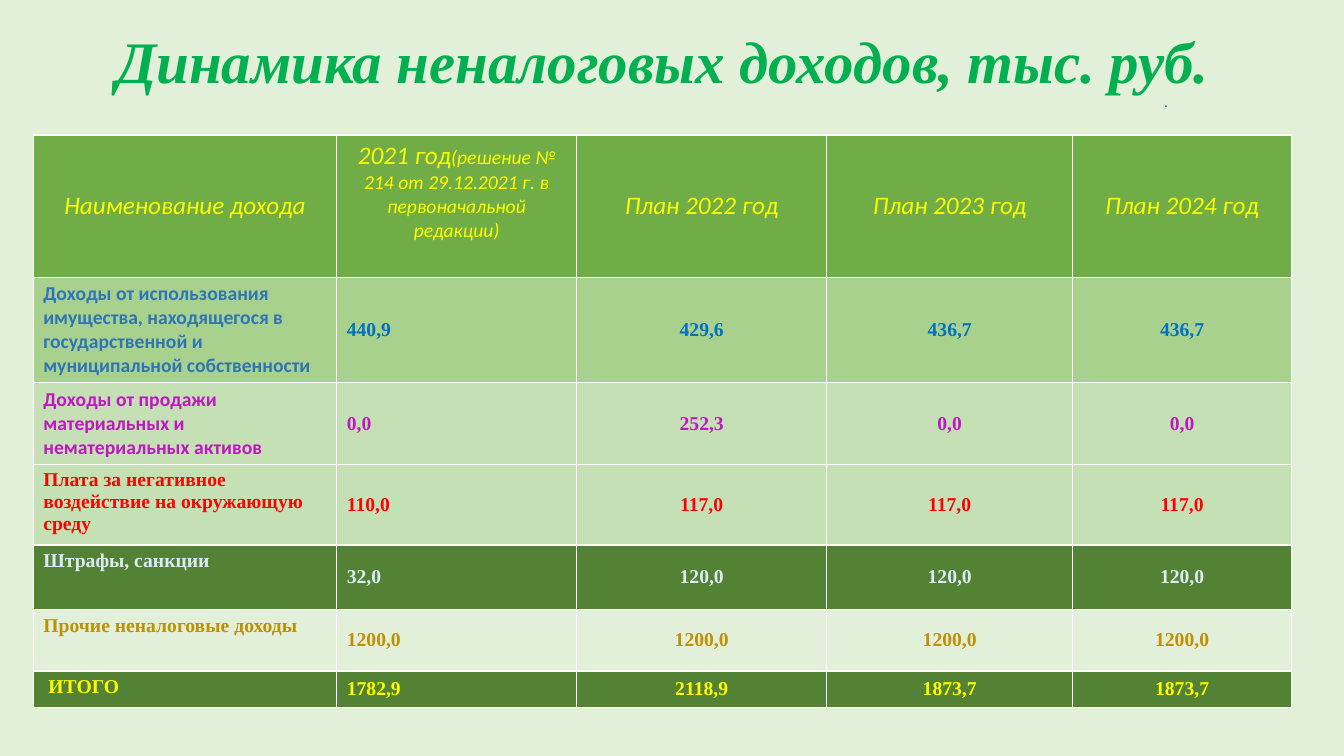
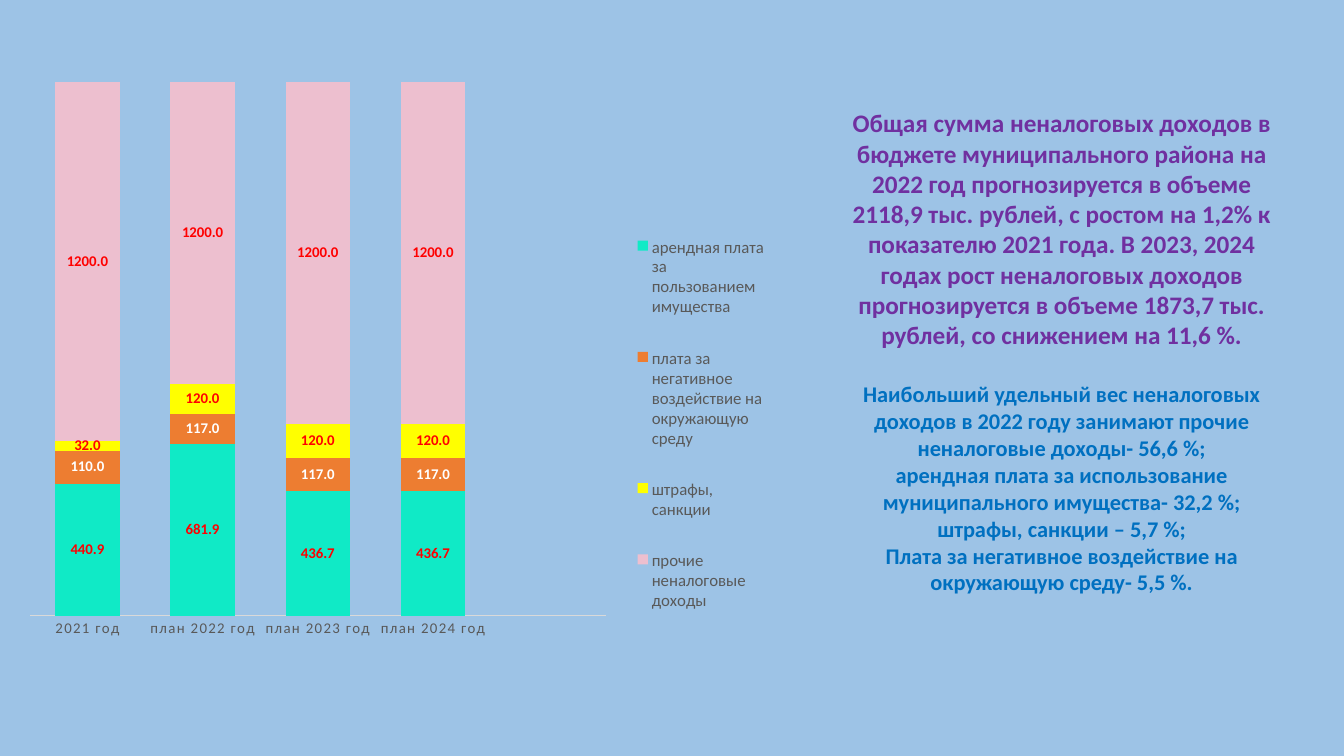
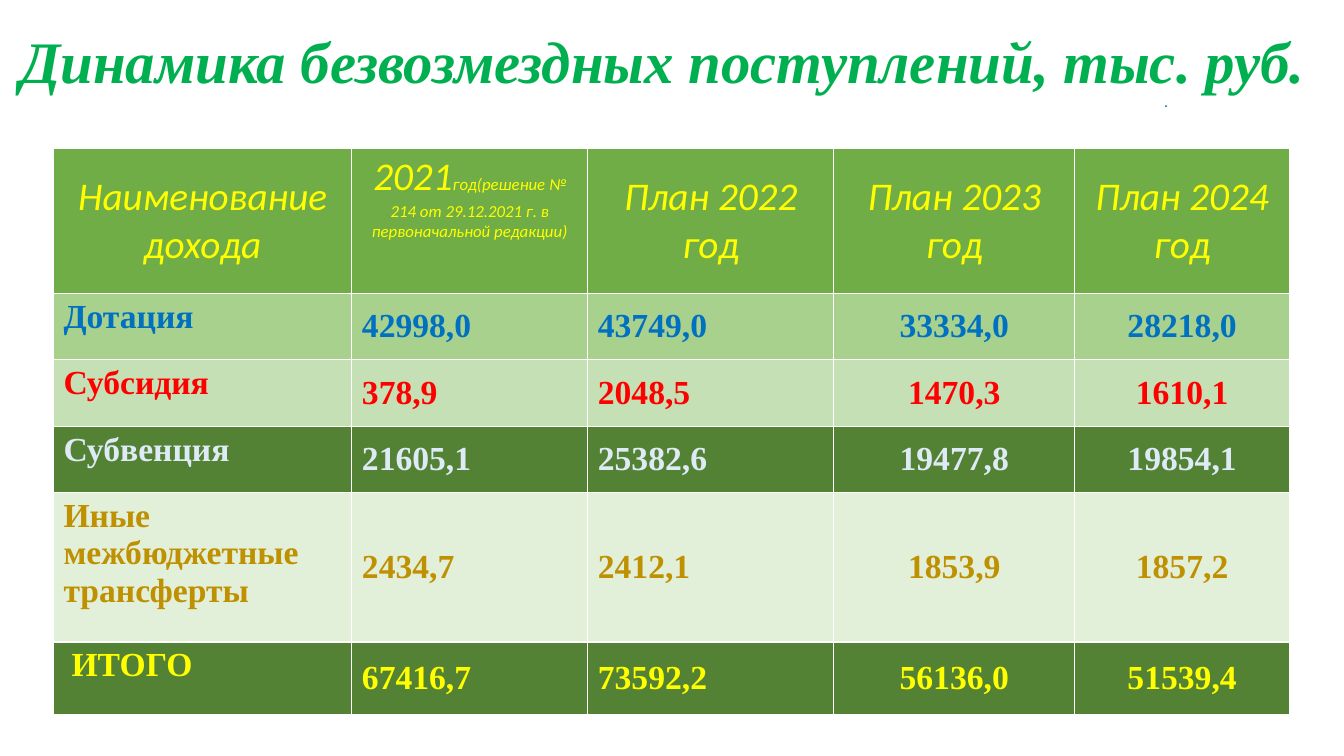
from dataclasses import dataclass

from lxml import etree
from pptx import Presentation
from pptx.chart.data import CategoryChartData
from pptx.dml.color import RGBColor
from pptx.enum import chart as charts, text as texts
from pptx.oxml.ns import qn
from pptx.util import Inches, Pt


@dataclass(frozen=True)
class Theme:
    serif: str = "Times New Roman"
    sans: str = "Calibri"
    title: str = "00B050"
    blue: str = "0070C0"
    steel: str = "2E75B6"
    magenta: str = "BE18C2"
    purple: str = "7030A0"
    red: str = "FF0000"
    ice: str = "DEEBF7"
    gold: str = "BF9000"
    yellow: str = "FFFF00"
    white: str = "FFFFFF"
    head: str = "70AD47"
    medium: str = "A9D18E"
    light: str = "C5E0B4"
    dark: str = "548235"
    pale: str = "E2F0D9"
    sky: str = "9DC3E6"
    grey: str = "595959"
    rule: str = "D9D9D9"
    title_size: float = 42
    dot_size: float = 9
    label_size: float = 10.6
    legend_size: float = 12
    lead_size: float = 18
    detail_size: float = 16


T = Theme()
CENTER, LEFT = texts.PP_ALIGN.CENTER, texts.PP_ALIGN.LEFT
TOP, MIDDLE = texts.MSO_ANCHOR.TOP, texts.MSO_ANCHOR.MIDDLE

DECISION = "(решение № 214 от 29.12.2021 г. в первоначальной редакции)"
PLANS = ["План 2022 год", "План 2023 год", "План 2024 год"]

# Each row: fill, name colour, value colour, name font, name, values
NON_TAX = dict(
    title="Динамика неналоговых доходов, тыс. руб.", background=T.pale,
    left=0.33, top=1.34, columns=[3.01, 2.38, 2.48, 2.44, 2.17],
    heights=[1.41, 1.03, 0.8, 0.8, 0.64, 0.61, 0.36],
    year=("2021 год", DECISION), head_size=18, note_size=14, size=14,
    left_columns=1, total_indent=0.05,
    rows=[
        (T.medium, T.steel, T.blue, T.sans,
         "Доходы от использования имущества, находящегося в государственной "
         "и муниципальной собственности", ["440,9", "429,6", "436,7", "436,7"]),
        (T.light, T.magenta, T.magenta, T.sans,
         "Доходы от продажи материальных и нематериальных активов",
         ["0,0", "252,3", "0,0", "0,0"]),
        (T.light, T.red, T.red, T.serif,
         "Плата за негативное воздействие на окружающую среду",
         ["110,0", "117,0", "117,0", "117,0"]),
        (T.dark, T.ice, T.ice, T.serif, "Штрафы, санкции",
         ["32,0", "120,0", "120,0", "120,0"]),
        (T.pale, T.gold, T.gold, T.serif, "Прочие неналоговые доходы",
         ["1200,0", "1200,0", "1200,0", "1200,0"]),
        (T.dark, T.yellow, T.yellow, T.serif, "ИТОГО",
         ["1782,9", "2118,9", "1873,7", "1873,7"]),
    ])

GRANTS = dict(
    title="Динамика безвозмездных поступлений, тыс. руб.", background=T.white,
    left=0.53, top=1.47, columns=[2.96, 2.34, 2.44, 2.39, 2.13],
    heights=[1.44, 0.66, 0.66, 0.66, 1.48, 0.72],
    year=("2021", "год" + DECISION), head_size=28, note_size=12, size=24,
    left_columns=2, total_indent=0.08,
    rows=[
        (T.medium, T.blue, T.blue, T.serif, "Дотация",
         ["42998,0", "43749,0", "33334,0", "28218,0"]),
        (T.light, T.red, T.red, T.serif, "Субсидия",
         ["378,9", "2048,5", "1470,3", "1610,1"]),
        (T.dark, T.ice, T.ice, T.serif, "Субвенция",
         ["21605,1", "25382,6", "19477,8", "19854,1"]),
        (T.pale, T.gold, T.gold, T.serif, "Иные межбюджетные трансферты",
         ["2434,7", "2412,1", "1853,9", "1857,2"]),
        (T.dark, T.yellow, T.yellow, T.serif, "ИТОГО",
         ["67416,7", "73592,2", "56136,0", "51539,4"]),
    ])

# The last category is an empty slot to the right of the columns
YEARS = ["2021 год", "план 2022 год", "план 2023 год", "план 2024 год", ""]
SERIES = [
    ("арендная плата за пользованием имущества",
     [440.9, 681.9, 436.7, 436.7, None], "10EAC6", T.red),
    ("плата за негативное воздействие на окружающую среду",
     [110, 117, 117, 117, None], "ED7D31", T.white),
    ("штрафы, санкции", [32, 120, 120, 120, None], T.yellow, T.red),
    ("прочие неналоговые доходы",
     [1200, 1200, 1200, 1200, None], "EDBFCF", T.red),
]
PLOT_AREA = (0, 0.032, 0.721, 0.808)
LEGEND_AREA = (0.76, 0.22, 0.16, 0.66)

SUMMARY = (
    "Общая сумма неналоговых доходов в бюджете муниципального района на 2022 год "
    "прогнозируется в объеме 2118,9 тыс. рублей, с ростом на 1,2% к показателю "
    "2021 года. В 2023, 2024 годах рост неналоговых доходов прогнозируется в "
    "объеме 1873,7 тыс. рублей, со снижением на 11,6 %.")
SHARES = [
    "Наибольший удельный вес неналоговых доходов в 2022 году занимают прочие "
    "неналоговые доходы- 56,6 %;",
    "арендная плата за использование муниципального имущества- 32,2 %;",
    "штрафы, санкции – 5,7 %;",
    "Плата за негативное воздействие на окружающую среду- 5,5 %.",
]


def rgb(value):
    return RGBColor.from_string(value)


def style(font, size, color, name=T.sans, bold=False, italic=False):
    font.size, font.name, font.bold, font.italic = Pt(size), name, bold, italic
    font.color.rgb = rgb(color)


def write(para, text, align=CENTER, before=0, **font):
    """Add a run to a paragraph and set the paragraph's alignment and spacing."""
    para.alignment, para.line_spacing = align, 1.0
    para.space_before = Pt(before)
    span = para.add_run()
    span.text = text
    style(span.font, **font)


def new_slide(deck, layout, background):
    page = deck.slides.add_slide(deck.slide_layouts[layout])
    page.background.fill.solid()
    page.background.fill.fore_color.rgb = rgb(background)
    return page


def add_title(page, text):
    box = page.shapes.title
    box.left, box.top, box.width, box.height = map(Inches, (0, 0.19, 13.14, 1.28))
    frame = box.text_frame
    frame.word_wrap, frame.auto_size = True, texts.MSO_AUTO_SIZE.NONE
    frame.vertical_anchor = TOP
    write(frame.paragraphs[0], text, size=T.title_size, color=T.title,
          name=T.serif, bold=True, italic=True)
    dot = frame.add_paragraph()
    dot._p.get_or_add_pPr().set("marL", str(Inches(11.45)))
    write(dot, ".", align=LEFT, size=T.dot_size, color=T.blue, bold=True, italic=True)


def fill_cell(cell, fill, spans, align=CENTER, anchor=MIDDLE):
    """Colour a cell and write its spans, given as (text, format) pairs."""
    cell.fill.solid()
    cell.fill.fore_color.rgb = rgb(fill)
    cell.vertical_anchor = anchor
    for text, font in spans:
        write(cell.text_frame.paragraphs[0], text, align=align, **font)


def table_slide(deck, data):
    page = new_slide(deck, 5, data["background"])
    add_title(page, data["title"])
    columns, heights = data["columns"], data["heights"]
    table = page.shapes.add_table(
        len(heights), len(columns), Inches(data["left"]), Inches(data["top"]),
        Inches(sum(columns)), Inches(sum(heights))).table
    for column, width in zip(table.columns, columns):
        column.width = Inches(width)
    for row, height in zip(table.rows, heights):
        row.height = Inches(height)

    head = dict(size=data["head_size"], color=T.yellow, italic=True)
    year, note = data["year"]
    fill_cell(table.cell(0, 1), T.head,
              [(year, head), (note, {**head, "size": data["note_size"]})], anchor=TOP)
    for index, text in zip((0, 2, 3, 4), ["Наименование дохода", *PLANS]):
        fill_cell(table.cell(0, index), T.head, [(text, head)])

    for r, (fill, name_color, color, font, name, values) in enumerate(data["rows"], 1):
        body = dict(size=data["size"], bold=True)
        fill_cell(table.cell(r, 0), fill,
                  [(name, dict(body, color=name_color, name=font))], LEFT, TOP)
        for c, value in enumerate(values, 1):
            fill_cell(table.cell(r, c), fill,
                      [(value, dict(body, color=color, name=T.serif))],
                      LEFT if c <= data["left_columns"] else CENTER)
    table.cell(len(heights) - 1, 0).margin_left = Inches(0.1 + data["total_indent"])


def set_layout(parent, area, inner=False):
    """Place a plot area or legend by fractions of the chart."""
    for old in parent.findall(qn("c:layout")):
        parent.remove(old)
    layout = etree.Element(qn("c:layout"))
    manual = etree.SubElement(layout, qn("c:manualLayout"))
    items = [("layoutTarget", "inner")] if inner else []
    items += [("xMode", "edge"), ("yMode", "edge"), *zip("xywh", area)]
    for tag, value in items:
        etree.SubElement(manual, qn("c:" + tag)).set("val", str(value))
    position = parent.find(qn("c:legendPos"))
    if position is None:
        parent.insert(0, layout)
    else:
        position.addnext(layout)


def add_income_chart(page):
    data = CategoryChartData(number_format="0.0")
    data.categories = YEARS
    for name, values, *_ in SERIES:
        data.add_series(name, values)
    chart = page.shapes.add_chart(
        charts.XL_CHART_TYPE.COLUMN_STACKED_100, Inches(0.29), Inches(0.6),
        Inches(7.93), Inches(6.56), data).chart
    chart.has_title = False
    style(chart.font, T.label_size, T.grey)
    plot = chart.plots[0]
    plot.gap_width, plot.overlap, plot.vary_by_categories = 79, 100, False
    for series, (_, _, color, label_color) in zip(plot.series, SERIES):
        series.format.fill.solid()
        series.format.fill.fore_color.rgb = rgb(color)
        labels = series.data_labels
        labels.show_value = True
        labels.number_format, labels.number_format_is_linked = "0.0", False
        style(labels.font, T.label_size, label_color, bold=True)

    chart.value_axis.visible = False
    chart.value_axis.has_major_gridlines = False
    axis = chart.category_axis
    axis.major_tick_mark = charts.XL_TICK_MARK.NONE
    axis.format.line.color.rgb = rgb(T.rule)
    axis.format.line.width = Pt(0.75)
    style(axis.tick_labels.font, T.label_size, T.grey)
    axis._element.find(".//" + qn("a:defRPr")).set("spc", "100")

    chart.has_legend = True
    chart.legend.position = charts.XL_LEGEND_POSITION.TOP
    chart.legend.include_in_layout = False
    style(chart.legend.font, T.legend_size, T.grey)
    set_layout(chart.legend._element, LEGEND_AREA)
    set_layout(chart._chartSpace.find(".//" + qn("c:plotArea")), PLOT_AREA, inner=True)


def chart_slide(deck):
    page = new_slide(deck, 6, T.sky)
    add_income_chart(page)
    box = page.shapes.add_textbox(Inches(8.22), Inches(1.02), Inches(4.62), Inches(5.89))
    frame = box.text_frame
    frame.word_wrap = True
    write(frame.paragraphs[0], SUMMARY, size=T.lead_size, color=T.purple, bold=True)
    for index, share in enumerate(SHARES):
        write(frame.add_paragraph(), share, before=0 if index else 22,
              size=T.detail_size, color=T.blue, bold=True)


def main():
    deck = Presentation()
    deck.slide_width, deck.slide_height = Inches(13.33), Inches(7.5)
    table_slide(deck, NON_TAX)
    chart_slide(deck)
    table_slide(deck, GRANTS)
    deck.save("out.pptx")


if __name__ == "__main__":
    main()
